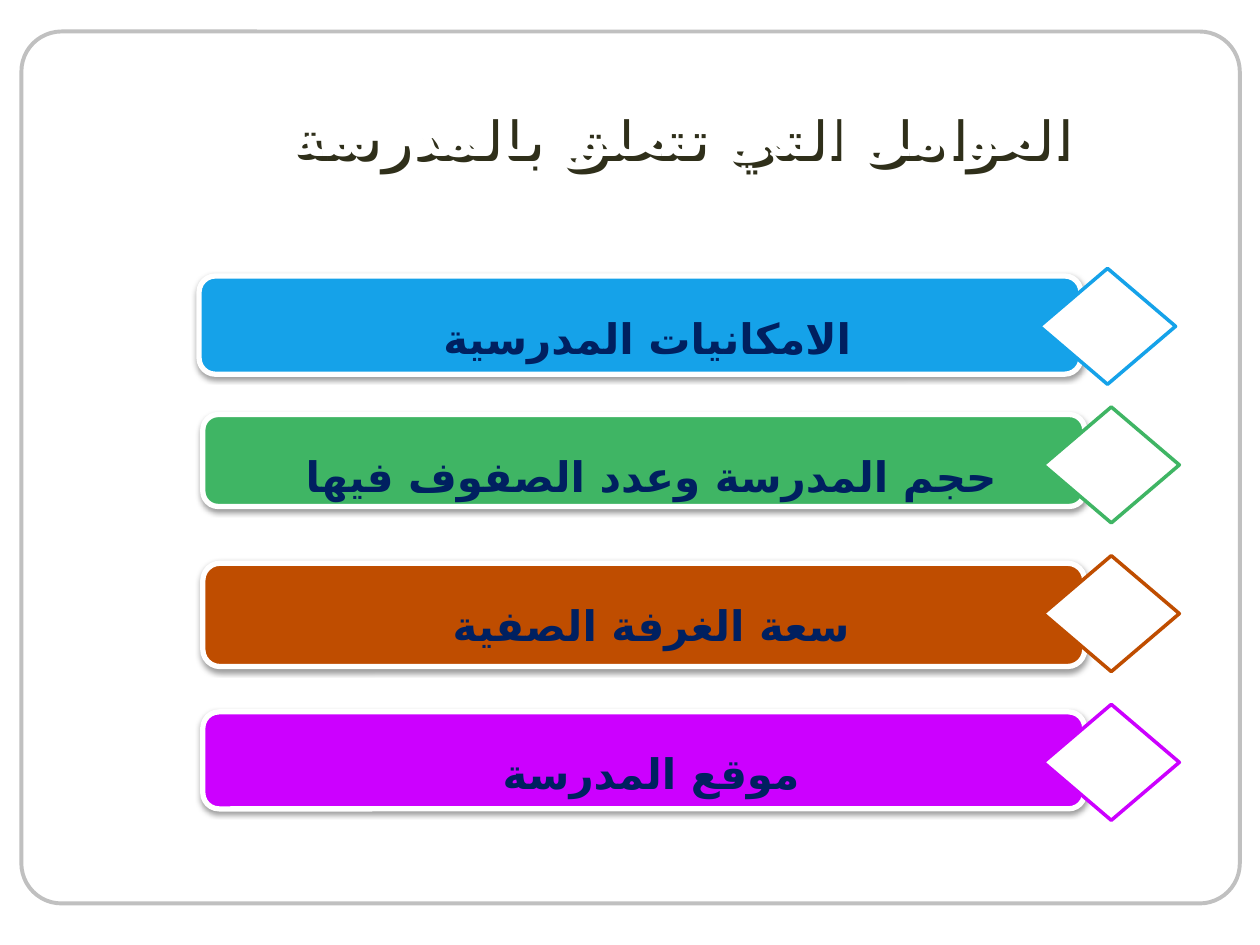
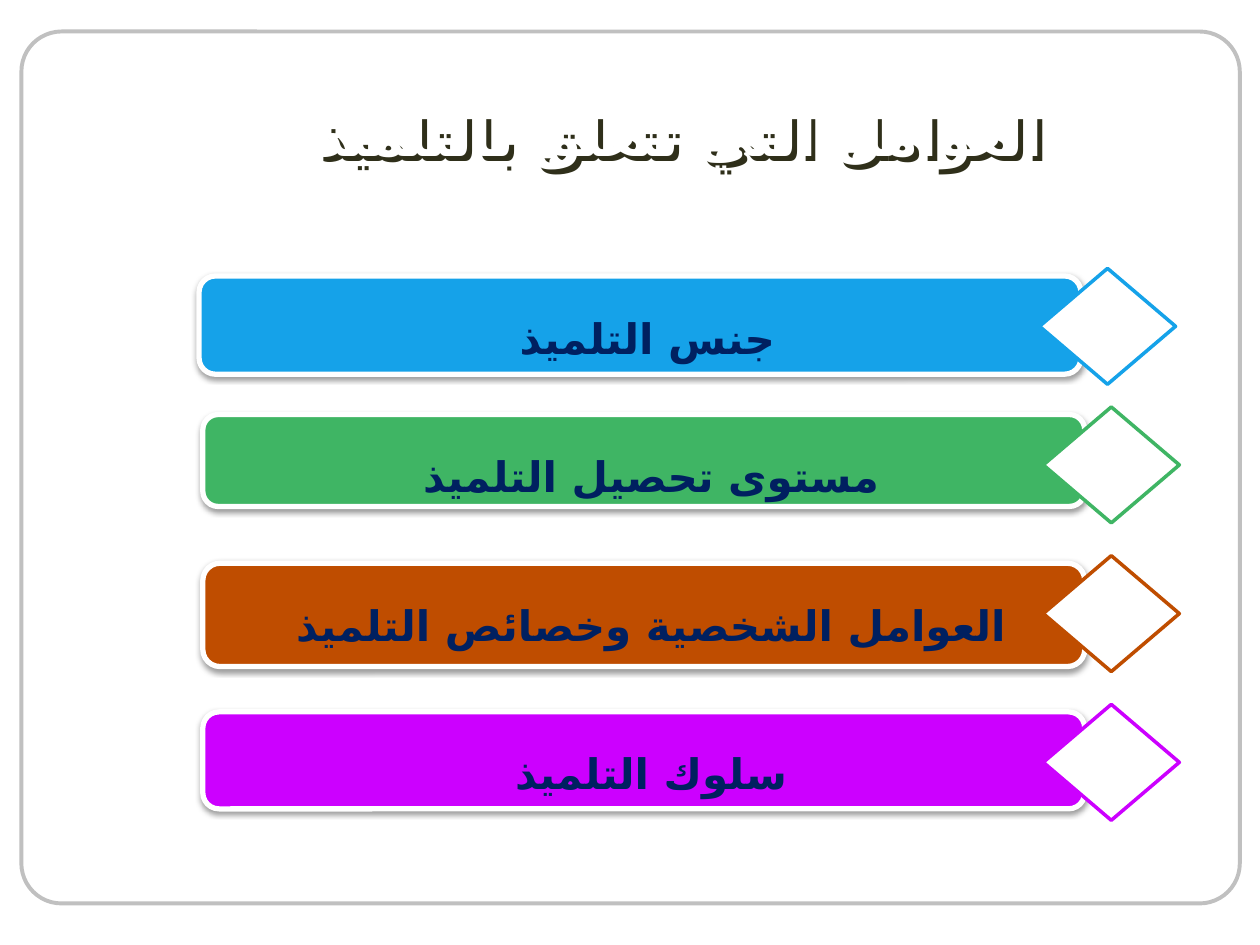
import pptx
import pptx.util
import pptx.dml.color
import pptx.enum.shapes
import pptx.enum.text
import pptx.oxml
import pptx.oxml.ns

SHAPES = pptx.enum.shapes.MSO_SHAPE
ANCHOR = pptx.enum.text.MSO_ANCHOR
ARABIC_FONT = "DejaVu Sans"
COLORS = {
    "white": "FFFFFF", "frame": "C0C0C0", "label": "002060",
    "blue": "15A2E9", "green": "3FB564", "orange": "BF4D00", "purple": "CC00FF",
    "bar shadow": "000000", "title shadow": "2F2F1A",
}

# The slide is a grid of 100 columns and 75 rows
CELL = pptx.util.Inches(0.1)
FRAME_BOX = (1.7, 2.5, 96.7, 69.2)
TITLE_BOX = (9.8, 7.8, 88.2, 5.8)
# Each row of the list: colour, and the box of its bar
LIST_ROWS = [
    ("blue", (15.8, 21.9, 70, 7.8)),
    ("green", (16.1, 32.9, 70, 7.3)),
    ("orange", (16.1, 44.7, 70, 8.2)),
    ("purple", (16.1, 56.5, 70, 7.7)),
]

# The space that ends each label is part of its centred line
SLIDES = [
    ("العوامل التي تتعلق بالمدرسة", [
        "الامكانيات المدرسية ",
        "حجم المدرسة وعدد الصفوف فيها ",
        "سعة الغرفة الصفية ",
        "موقع المدرسة ",
    ]),
    ("العوامل التي تتعلق بالتلميذ", [
        "جنس التلميذ ",
        "مستوى تحصيل التلميذ ",
        "العوامل الشخصية وخصائص التلميذ ",
        "سلوك التلميذ ",
    ]),
]


def rgb(name):
    return pptx.dml.color.RGBColor.from_string(COLORS[name])


def on_grid(box):
    return [round(length * CELL) for length in box]


def add_shadow(shape, color, distance, angle, blur=0, opacity=100):
    """Give a shape an outer shadow; distance and blur are in points."""
    shape.shadow.inherit = False
    effects = shape._element.spPr.find(pptx.oxml.ns.qn("a:effectLst"))
    effects.append(pptx.oxml.parse_xml(
        f'<a:outerShdw {pptx.oxml.ns.nsdecls("a")} blurRad="{pptx.util.Pt(blur)}" '
        f'dist="{pptx.util.Pt(distance)}" dir="{angle * 60000}" rotWithShape="0">'
        f'<a:srgbClr val="{COLORS[color]}"><a:alpha val="{opacity * 1000}"/></a:srgbClr>'
        '</a:outerShdw>'))


def write_text(shape, text, size, color, font, anchor, spacing=1.0):
    """Write one bold, centred, right-to-left line."""
    frame = shape.text_frame
    frame.word_wrap = True
    frame.vertical_anchor = anchor
    para = frame.paragraphs[0]
    para.alignment = pptx.enum.text.PP_ALIGN.CENTER
    para.line_spacing = spacing
    para._p.get_or_add_pPr().set("rtl", "1")
    span = para.add_run()
    span.text = text
    span.font.size = pptx.util.Pt(size)
    span.font.bold = True
    span.font.name = font
    span.font.color.rgb = rgb(color)
    script_font = pptx.oxml.parse_xml(
        f'<a:cs {pptx.oxml.ns.nsdecls("a")} typeface="{ARABIC_FONT}"/>')
    span.font._element.append(script_font)


def add_box(page, kind, box, line, width, fill=None):
    shape = page.shapes.add_shape(kind, *on_grid(box))
    shape.shadow.inherit = False
    if fill:
        shape.fill.solid()
        shape.fill.fore_color.rgb = rgb(fill)
    else:
        shape.fill.background()
    shape.line.color.rgb = rgb(line)
    shape.line.width = pptx.util.Pt(width)
    return shape


def add_frame(page, box):
    frame = add_box(page, SHAPES.ROUNDED_RECTANGLE, box, "frame", 2.25)
    frame.adjustments[0] = 0.046


def add_title(page, box, text):
    title = page.shapes.title
    title.left, title.top, title.width, title.height = on_grid(box)
    write_text(title, text, 31.5, "white", ARABIC_FONT, ANCHOR.MIDDLE)
    add_shadow(title, "title shadow", distance=4, angle=45)


def add_list_row(page, box, text, color):
    """Draw a labelled bar with a diamond over its right end."""
    left, top, width, height = box
    bar = add_box(page, SHAPES.ROUNDED_RECTANGLE, box, "white", 3, fill=color)
    add_shadow(bar, "bar shadow", distance=1.6, angle=90, blur=3.1, opacity=38)
    write_text(bar, text, 24, "label", "Arial", ANCHOR.TOP, spacing=1.5)
    diamond_box = (left + width - 3.3, top - 0.6, 10.8, 9.2)
    add_box(page, SHAPES.DIAMOND, diamond_box, color, 2, fill="white")


def add_factors_slide(deck, title, labels):
    page = deck.slides.add_slide(deck.slide_layouts.get_by_name("Title Only"))
    page.background.fill.solid()
    page.background.fill.fore_color.rgb = rgb("white")
    add_frame(page, FRAME_BOX)
    add_title(page, TITLE_BOX, title)
    for (color, box), label in zip(LIST_ROWS, labels):
        add_list_row(page, box, label, color)


def main():
    deck = pptx.Presentation()
    deck.slide_width, deck.slide_height = 100 * CELL, 75 * CELL
    for title, labels in SLIDES:
        add_factors_slide(deck, title, labels)
    deck.save("out.pptx")


if __name__ == "__main__":
    main()
